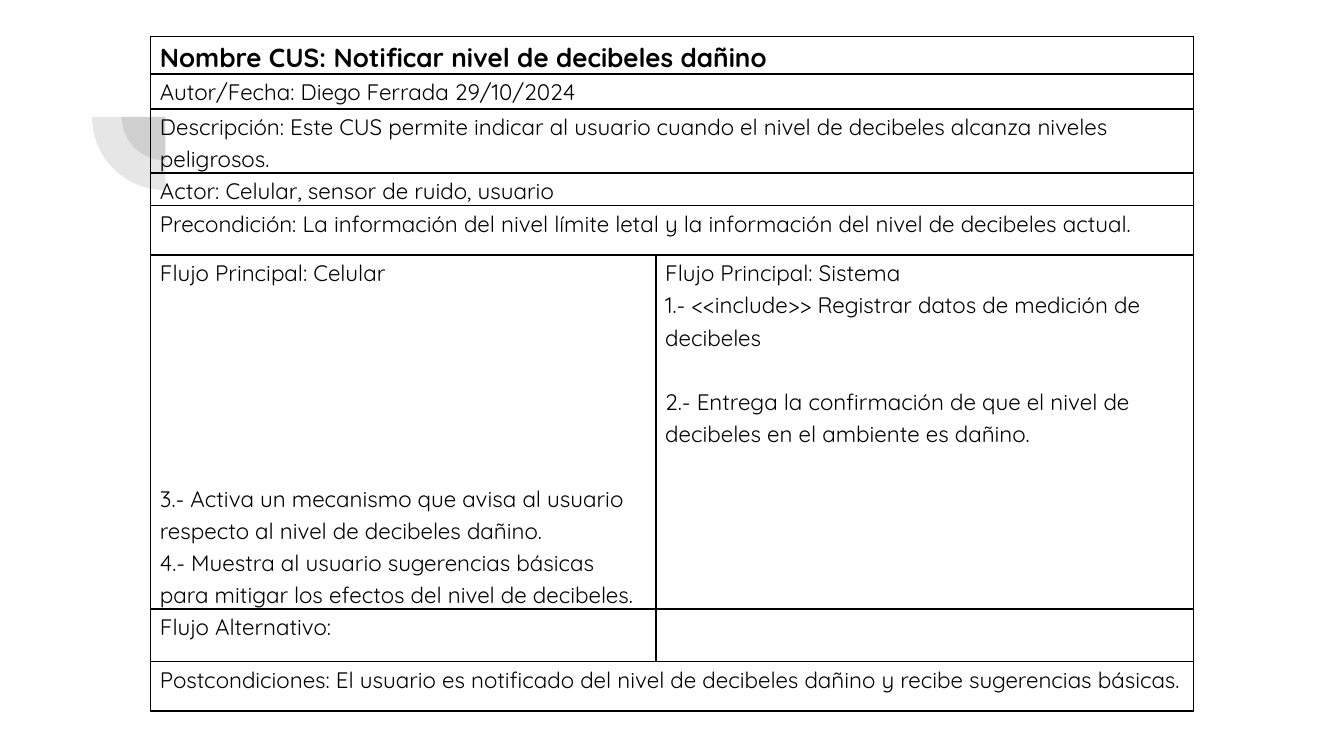
import pptx
import pptx.util
import pptx.dml.color
import pptx.enum.shapes
import pptx.oxml
import pptx.oxml.ns

Inch = pptx.util.Inches
Pt = pptx.util.Pt

COLORS = {"ink": "000000", "arc": "424242"}
FONT = "Quicksand"
SIZE = 12
LEAD = 1.15
LINE = SIZE * 1.25 * LEAD
WIDE = 10
HIGH = WIDE * 9 / 16

ROWS = [
    (0.26, ["Nombre CUS: Notificar nivel de decibeles dañino"]),
    (0.26, ["Autor/Fecha: Diego Ferrada 29/10/2024"]),
    (0.37, ["Descripción: Este CUS permite indicar al usuario cuando el nivel "
            "de decibeles alcanza niveles peligrosos."]),
    (0.19, ["Actor: Celular, sensor de ruido, usuario"]),
    (0.37, ["Precondición: La información del nivel límite letal y la "
            "información del nivel de decibeles actual."]),
    (2.42, [
        [("Flujo Principal: Celular", 0),
         ("3.- Activa un mecanismo que avisa al usuario respecto al nivel "
          "de decibeles dañino.", 6),
         ("4.- Muestra al usuario sugerencias básicas para mitigar los "
          "efectos del nivel de decibeles.", 0)],
        [("Flujo Principal: Sistema", 0),
         ("1.- <<include>> Registrar datos de medición de decibeles", 0),
         ("2.- Entrega la confirmación de que el nivel de decibeles en el "
          "ambiente es dañino.", 1)],
    ]),
    (0.39, ["Flujo Alternativo:", ""]),
    (0.37, ["Postcondiciones: El usuario es notificado del nivel de decibeles "
            "dañino y recibe sugerencias básicas."]),
]
COLS = [3.76, 4]
LEFT, TOP = 1.12, 0.27
ARCS = [0.65, 1.09]
MID = (1.23, 0.87)


def tint(name):
    return pptx.dml.color.RGBColor.from_string(COLORS[name])


def write(frame, text, size=SIZE, bold=False, color="ink"):
    parts = [(text, 0)] if isinstance(text, str) else text
    for i, (words, gap) in enumerate(parts):
        para = frame.add_paragraph() if i else frame.paragraphs[0]
        para.line_spacing = LEAD
        para.space_before = Pt(gap * LINE)
        para.font.size = Pt(size)
        if words:
            run = para.add_run()
            run.text = words
            run.font.name = FONT
            run.font.size = Pt(size)
            run.font.bold = bold
            run.font.color.rgb = tint(color)


def frame_cell(cell):
    cell.margin_left = cell.margin_right = Inch(0.07)
    cell.margin_top = cell.margin_bottom = 0
    props = cell._tc.get_or_add_tcPr()
    for side in ("lnL", "lnR", "lnT", "lnB"):
        props.append(pptx.oxml.parse_xml(
            f'<a:{side} {pptx.oxml.ns.nsdecls("a")} w="{Pt(1)}"><a:solidFill>'
            f'<a:srgbClr val="{COLORS["ink"]}"/></a:solidFill></a:{side}>'))
    cell.fill.background()


def add_arc(slide, size):
    x, y = MID
    arc = slide.shapes.add_shape(
        pptx.enum.shapes.MSO_SHAPE.PIE,
        Inch(x - size / 2), Inch(y - size / 2), Inch(size), Inch(size))
    arc.adjustments[0], arc.adjustments[1] = 108, 162
    arc.rotation = 270
    arc.shadow.inherit = False
    arc.line.fill.background()
    arc.fill.solid()
    arc.fill.fore_color.rgb = tint("arc")
    shade = arc.fill._xPr.find(".//" + pptx.oxml.ns.qn("a:srgbClr"))
    shade.append(pptx.oxml.parse_xml(
        f'<a:alpha {pptx.oxml.ns.nsdecls("a")} val="13000"/>'))


def add_grid(slide):
    high = sum(row[0] for row in ROWS)
    grid = slide.shapes.add_table(
        len(ROWS), len(COLS), Inch(LEFT), Inch(TOP),
        Inch(sum(COLS)), Inch(high)).table
    grid.first_row = grid.horz_banding = False
    for col, wide in zip(grid.columns, COLS):
        col.width = Inch(wide)
    for r, (tall, texts) in enumerate(ROWS):
        grid.rows[r].height = Inch(tall)
        for c in range(len(COLS)):
            frame_cell(grid.cell(r, c))
        if len(texts) == 1:
            grid.cell(r, 0).merge(grid.cell(r, len(COLS) - 1))
        for c, text in enumerate(texts):
            write(grid.cell(r, c).text_frame, text,
                  size=SIZE if r else 14, bold=r == 0)


def main():
    deck = pptx.Presentation()
    deck.slide_width, deck.slide_height = Inch(WIDE), Inch(HIGH)
    slide = deck.slides.add_slide(deck.slide_layouts[6])
    for size in ARCS:
        add_arc(slide, size)
    add_grid(slide)
    deck.save("out.pptx")


if __name__ == "__main__":
    main()
